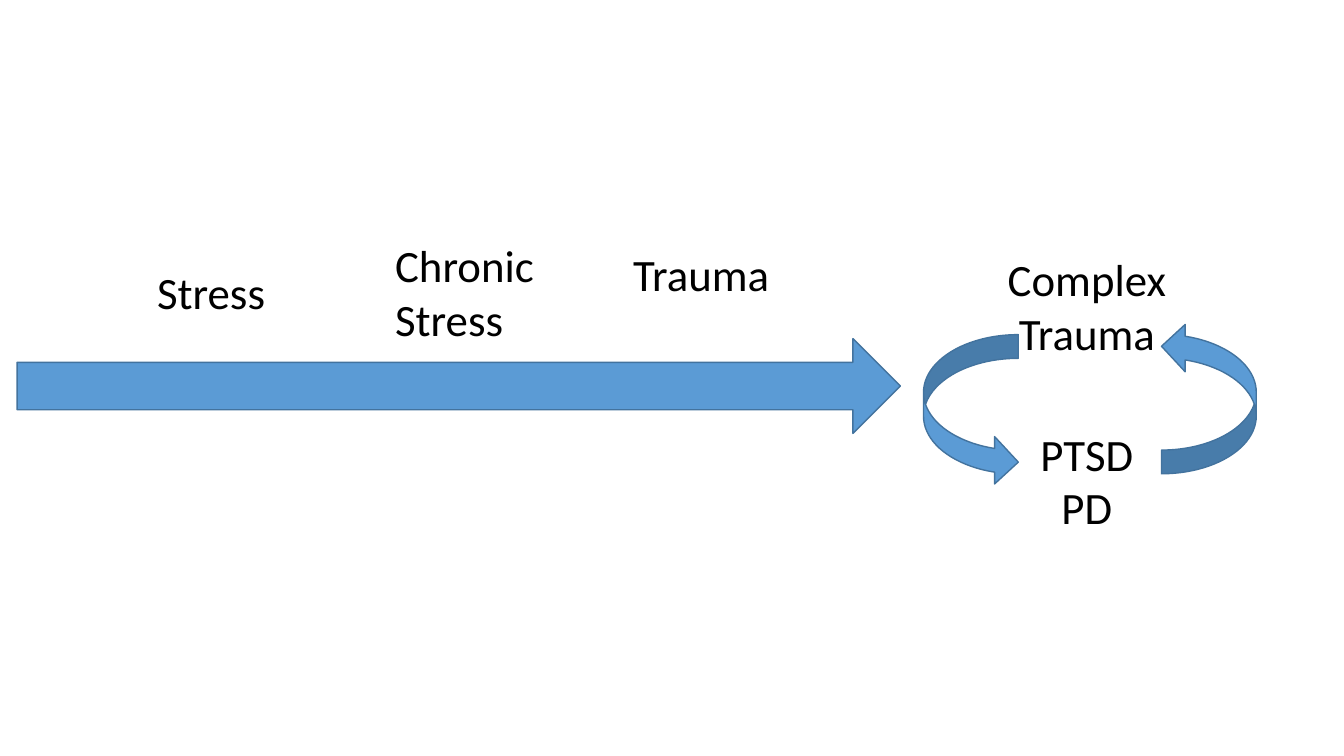
from pptx import Presentation
from pptx.dml.color import RGBColor
from pptx.enum.shapes import MSO_SHAPE as Shape
from pptx.enum.text import MSO_AUTO_SIZE as AutoSize, PP_ALIGN as Align
from pptx.util import Inches, Pt

FONT = "Calibri"
BLACK, BLUE, DARK_BLUE = "000000", "5B9BD5", "43739E"


def color(value):
    return RGBColor.from_string(value)


def add_arrow(page, kind, left, top, width, height, rotation=0):
    arrow = page.shapes.add_shape(
        kind, Inches(left), Inches(top), Inches(width), Inches(height))
    arrow.shadow.inherit = False
    arrow.fill.solid()
    arrow.fill.fore_color.rgb = color(BLUE)
    arrow.line.color.rgb = color(DARK_BLUE)
    arrow.line.width = Pt(1)
    arrow.rotation = rotation


def add_label(page, text, left, top, width, height, align=Align.LEFT):
    box = page.shapes.add_textbox(
        Inches(left), Inches(top), Inches(width), Inches(height))
    frame = box.text_frame
    frame.word_wrap = True
    frame.auto_size = AutoSize.SHAPE_TO_FIT_TEXT
    frame.text = text
    for para in frame.paragraphs:
        para.alignment = align
        for span in para.runs:
            span.font.name = FONT
            span.font.size = Pt(32)
            span.font.color.rgb = color(BLACK)


def add_progression(page, left, top, width, height):
    """Long arrow with the stages of stress above it."""
    add_arrow(page, Shape.RIGHT_ARROW, left, top, width, height)
    stages = [
        # text, offset from the arrow, size
        ("Stress", 1.29, -0.78, 1.34, 0.64),
        ("Chronic\nStress", 3.65, -1.05, 1.65, 1.18),
        ("Trauma", 6.01, -0.96, 1.81, 0.64),
    ]
    for text, across, down, label_width, label_height in stages:
        add_label(page, text, left + across, top + down,
                  label_width, label_height)


def add_cycle(page, left, top, width, height):
    """Two outcomes joined by a loop of curved arrows."""
    middle = left + width / 2
    outcomes = [
        ("Complex Trauma", top - 0.75, 1.81),
        ("PTSD\nPD", top + 0.98, 1.34),
    ]
    for text, label_top, label_width in outcomes:
        add_label(page, text, middle - label_width / 2 - 0.03, label_top,
                  label_width, 1.18, Align.CENTER)

    arrow_width, arrow_height = 0.94, 1.5
    add_arrow(page, Shape.CURVED_RIGHT_ARROW, left,
              top + height - arrow_height, arrow_width, arrow_height)
    add_arrow(page, Shape.CURVED_RIGHT_ARROW, left + width - arrow_width,
              top, arrow_width, arrow_height, rotation=180)


def main():
    deck = Presentation()
    deck.slide_width, deck.slide_height = Inches(13.33), Inches(7.5)
    page = deck.slides.add_slide(deck.slide_layouts[6])
    add_progression(page, 0.17, 3.36, 8.76, 0.94)
    add_cycle(page, 9.16, 3.2, 3.3, 1.62)
    deck.save("out.pptx")


if __name__ == "__main__":
    main()
